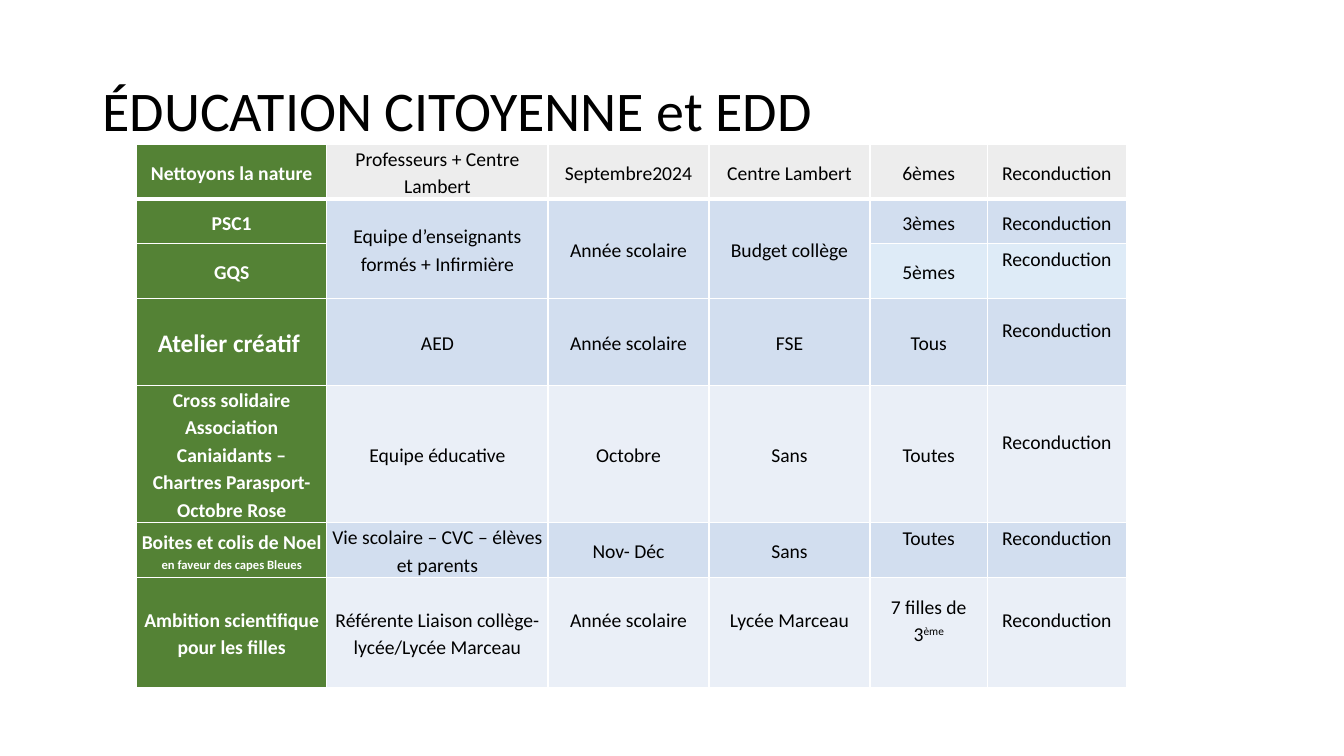
from lxml.etree import SubElement
from pptx import Presentation
from pptx.dml.color import RGBColor
from pptx.enum.text import MSO_ANCHOR, MSO_AUTO_SIZE, PP_ALIGN
from pptx.oxml.ns import qn
from pptx.util import Pt

FONT = "Calibri"
COLORS = {
    "text": "000000", "white": "FFFFFF", "label": "548235", "grey": "EDEDED",
    "blue": "D2DEEF", "sky": "DEEBF7", "pale": "EAEFF7",
}
COL_WIDTHS = [136, 158, 115, 115, 84, 99]

# Row height, fill of the data cells, texts (None: merged with the cell above)
ROWS = [
    (39, "grey", ["Nettoyons la nature", "Professeurs + Centre Lambert", "Septembre2024",
                  "Centre Lambert", "6èmes", "Reconduction"]),
    (32, "blue", ["PSC1", "Equipe d’enseignants formés + Infirmière", "Année scolaire",
                  "Budget collège", "3èmes", "Reconduction"]),
    (39, "sky", ["GQS", None, None, None, "5èmes", "Reconduction"]),
    (62, "blue", ["Atelier créatif ", "AED", "Année scolaire", "FSE", "Tous", "Reconduction"]),
    (98, "pale", ["Cross solidaire\nAssociation Caniaidants – Chartres Parasport- Octobre Rose",
                  "Equipe éducative", "Octobre", "Sans", "Toutes", "Reconduction"]),
    (39, "blue", ["Boites et colis de Noel ", "Vie scolaire – CVC – élèves et parents",
                  "Nov- Déc", "Sans", "Toutes", "Reconduction"]),
    (79, "pale", ["Ambition scientifique pour les filles",
                  "Référente Liaison collège- lycée/Lycée Marceau", "Année scolaire",
                  "Lycée Marceau", "7 filles de 3", "Reconduction"]),
]
SIZES = {(3, 0): 18}
# Second run of a cell: text, size, baseline shift
SECOND_RUNS = {
    (5, 0): ("en faveur des capes Bleues", 9, 0),
    (6, 4): ("ème", 14, 30000),
}
# Cells whose text sits half a line above the middle
RAISED = {(2, 5), (3, 5), (4, 5), (5, 4), (5, 5), (6, 2), (6, 3), (6, 4), (6, 5)}


def rgb(name):
    return RGBColor.from_string(COLORS[name])


def style_run(r, size, color, bold=False):
    r.font.name = FONT
    r.font.size = Pt(size)
    r.font.bold = bold
    r.font.color.rgb = rgb(color)


def set_borders(cell, bottom):
    tc_pr = cell._tc.get_or_add_tcPr()
    for i, (side, width) in enumerate([("L", 1), ("R", 1), ("T", 1), ("B", bottom)]):
        ln = SubElement(tc_pr, qn(f"a:ln{side}"), w=str(Pt(width)))
        fill = SubElement(ln, qn("a:solidFill"))
        SubElement(fill, qn("a:srgbClr"), val=COLORS["white"])
        tc_pr.insert(i, ln)


def fill_cell(cell, row, col, text, fill):
    is_label = col == 0
    cell.fill.solid()
    cell.fill.fore_color.rgb = rgb("label" if is_label else fill)
    set_borders(cell, 3 if row == 0 else 1)
    cell.vertical_anchor = MSO_ANCHOR.MIDDLE
    cell.margin_left = cell.margin_right = Pt(3.6)
    cell.margin_top = 0
    cell.margin_bottom = Pt(19 if (row, col) in RAISED else 0)
    if text is None:
        return
    tf = cell.text_frame
    tf.text = text
    color = "white" if is_label else "text"
    for p in tf.paragraphs:
        p.alignment = PP_ALIGN.CENTER
        p.line_spacing = 1.15
        for r in p.runs:
            style_run(r, SIZES.get((row, col), 14), color, is_label)
    if (row, col) in SECOND_RUNS:
        extra, size, baseline = SECOND_RUNS[row, col]
        r = tf.paragraphs[-1].add_run()
        r.text = extra
        style_run(r, size, color, is_label)
        if baseline:
            r._r.get_or_add_rPr().set("baseline", str(baseline))


def add_title(s, text, left, top, width, height):
    sp = s.shapes.title
    sp.left, sp.top, sp.width, sp.height = Pt(left), Pt(top), Pt(width), Pt(height)
    tf = sp.text_frame
    tf.text = text
    tf.auto_size = MSO_AUTO_SIZE.NONE
    tf.vertical_anchor = MSO_ANCHOR.MIDDLE
    p = tf.paragraphs[0]
    p.alignment = PP_ALIGN.LEFT
    p.line_spacing = 0.9
    style_run(p.runs[0], 40, "text")


def add_projects_table(s, left, top):
    height = sum(row[0] for row in ROWS)
    frame = s.shapes.add_table(len(ROWS), len(COL_WIDTHS), Pt(left), Pt(top),
                               Pt(sum(COL_WIDTHS)), Pt(height))
    table = frame.table
    table.first_row = table.horz_banding = False
    for column, width in zip(table.columns, COL_WIDTHS):
        column.width = Pt(width)
    for i, (row_height, fill, texts) in enumerate(ROWS):
        table.rows[i].height = Pt(row_height)
        for j, text in enumerate(texts):
            fill_cell(table.cell(i, j), i, j, text, fill)
    # Cells shared by PSC1 and GQS
    for j in (1, 2, 3):
        table.cell(1, j).merge(table.cell(2, j))


def main():
    prs = Presentation()
    prs.slide_width, prs.slide_height = Pt(960), Pt(540)
    s = prs.slides.add_slide(prs.slide_layouts[5])
    add_title(s, "ÉDUCATION CITOYENNE et EDD", 66, 29, 828, 104)
    add_projects_table(s, 97.5, 103)
    prs.save("out.pptx")


if __name__ == "__main__":
    main()
